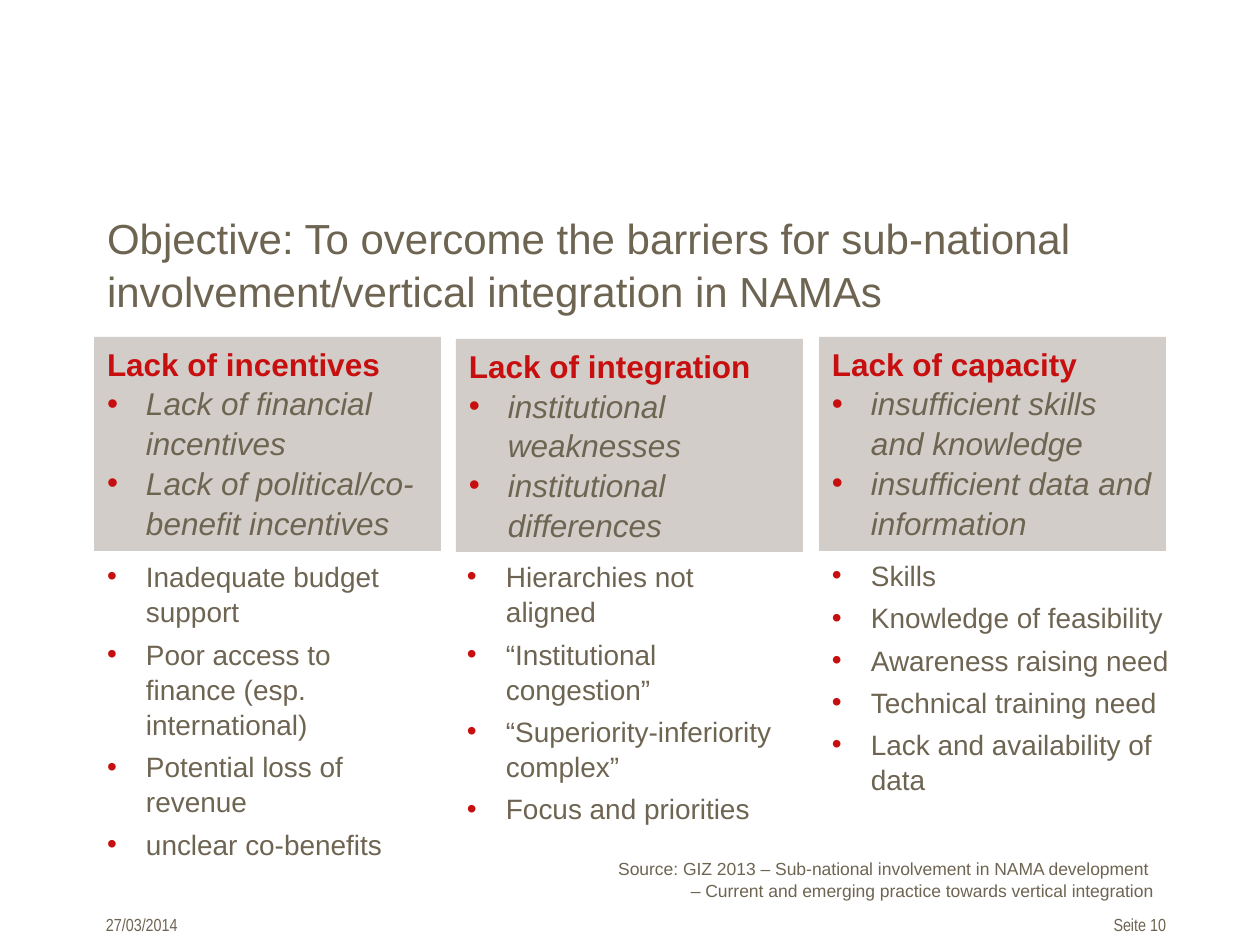
"""Build the slide on barriers to sub-national involvement in NAMAs."""
from lxml.etree import SubElement
from pptx import Presentation
from pptx.dml.color import RGBColor
from pptx.enum.shapes import MSO_SHAPE
from pptx.enum.text import MSO_ANCHOR, MSO_AUTO_SIZE, PP_ALIGN
from pptx.oxml.ns import qn
from pptx.util import Pt

TITLE = "Objective: To overcome the barriers for sub-national involvement/vertical integration in NAMAs"
COLS = [
    {"head": "Lack of incentives",
     "main": ["Lack of financial incentives", "Lack of political/co-benefit incentives"],
     "more": ["Inadequate budget support", "Poor access to finance (esp. international)",
              "Potential loss of revenue", "unclear co-benefits"],
     "card": (94, 337, 347, 214), "list": (94, 552, 347, 311)},
    {"head": "Lack of integration",
     "main": ["institutional weaknesses", "institutional differences"],
     "more": ["Hierarchies not aligned", "“Institutional congestion”",
              "“Superiority-inferiority complex”", "Focus and priorities"],
     "card": (456, 339, 347, 213), "list": (454, 552, 347, 311)},
    {"head": "Lack of capacity",
     "main": ["insufficient skills and knowledge", "insufficient data and information"],
     "more": ["Skills", "Knowledge of feasibility", "Awareness raising need",
              "Technical training need", "Lack and availability of data"],
     "card": (819, 337, 347, 214), "list": (819, 551, 368, 311)},
]
SOURCE = ("Source: GIZ 2013 – Sub-national involvement in NAMA development \v"
          "– Current and emerging practice towards vertical integration")
THEME = {
    "text": "6E6452", "red": "C80F0F", "card": "D2CDC8",
    "title": {"size": Pt(24), "name": "Arial"},
    "head": {"size": Pt(18), "name": "Arial", "bold": True},
    "main": {"size": Pt(18), "name": "Arial", "italic": True},
    "more": {"size": Pt(16), "name": "Arial"},
    "source": {"size": Pt(10), "name": "Arial"},
    "foot": {"size": Pt(10), "name": "Arial Narrow"},
}
NOTES = [
    (SOURCE, "source", (284, 851, 882, 55), PP_ALIGN.RIGHT, 13),
    ("27/03/2014", "foot", (93, 907, 179, 34), PP_ALIGN.LEFT, 13),
    ("Seite 10", "foot", (1038, 907, 128, 34), PP_ALIGN.RIGHT, 0),
]
INDENT = 39


def px(num):
    return round(num * 914400 / 126)


def scale(box):
    return [px(num) for num in box]


def setup(frame, right=13):
    form = {"word_wrap": True, "auto_size": MSO_AUTO_SIZE.NONE,
            "vertical_anchor": MSO_ANCHOR.TOP, "margin_left": px(13),
            "margin_right": px(right), "margin_top": px(6), "margin_bottom": px(6)}
    for key, val in form.items():
        setattr(frame, key, val)
    return frame


def bullet(para):
    props = para._p.get_or_add_pPr()
    props.set("marL", str(px(INDENT)))
    props.set("indent", str(-px(INDENT)))
    color = SubElement(props, qn("a:buClr"))
    SubElement(color, qn("a:srgbClr"), val=THEME["red"])
    SubElement(props, qn("a:buFont"), typeface="Arial")
    SubElement(props, qn("a:buChar"), char="•")


def write(frame, rows, align=PP_ALIGN.LEFT):
    for num, (text, style, dot, gap) in enumerate(rows):
        para = frame.add_paragraph() if num else frame.paragraphs[0]
        para.text = text
        if dot:
            bullet(para)
        form = {"alignment": align, "line_spacing": 1.05,
                "space_before": Pt(gap if num else 0)}
        for key, val in form.items():
            setattr(para, key, val)
        tone = THEME["red" if style == "head" else "text"]
        for run in para.runs:
            for key, val in THEME[style].items():
                setattr(run.font, key, val)
            run.font.color.rgb = RGBColor.from_string(tone)


def place(shape, box):
    for key, val in zip(("left", "top", "width", "height"), scale(box)):
        setattr(shape, key, val)


def add_card(slide, col):
    card = slide.shapes.add_shape(MSO_SHAPE.RECTANGLE, *scale(col["card"]))
    card.shadow.inherit = False
    card.fill.solid()
    card.fill.fore_color.rgb = RGBColor.from_string(THEME["card"])
    card.line.fill.background()
    rows = [(col["head"], "head", False, 0)]
    rows += [(text, "main", True, 0) for text in col["main"]]
    write(setup(card.text_frame), rows)


def add_text(slide, box, rows, align=PP_ALIGN.LEFT, right=13):
    area = slide.shapes.add_textbox(*scale(box))
    write(setup(area.text_frame, right), rows, align)


def main():
    deck = Presentation()
    deck.slide_width, deck.slide_height = scale((1260, 945))
    slide = deck.slides.add_slide(deck.slide_layouts[5])
    title = slide.shapes.title
    place(title, (94, 204, 1071, 86))
    write(setup(title.text_frame), [(TITLE, "title", False, 0)])
    for col in COLS:
        add_card(slide, col)
        add_text(slide, col["list"], [(text, "more", True, 4) for text in col["more"]])
    for text, style, box, align, right in NOTES:
        add_text(slide, box, [(text, style, False, 0)], align, right)
    deck.save("out.pptx")


if __name__ == "__main__":
    main()
